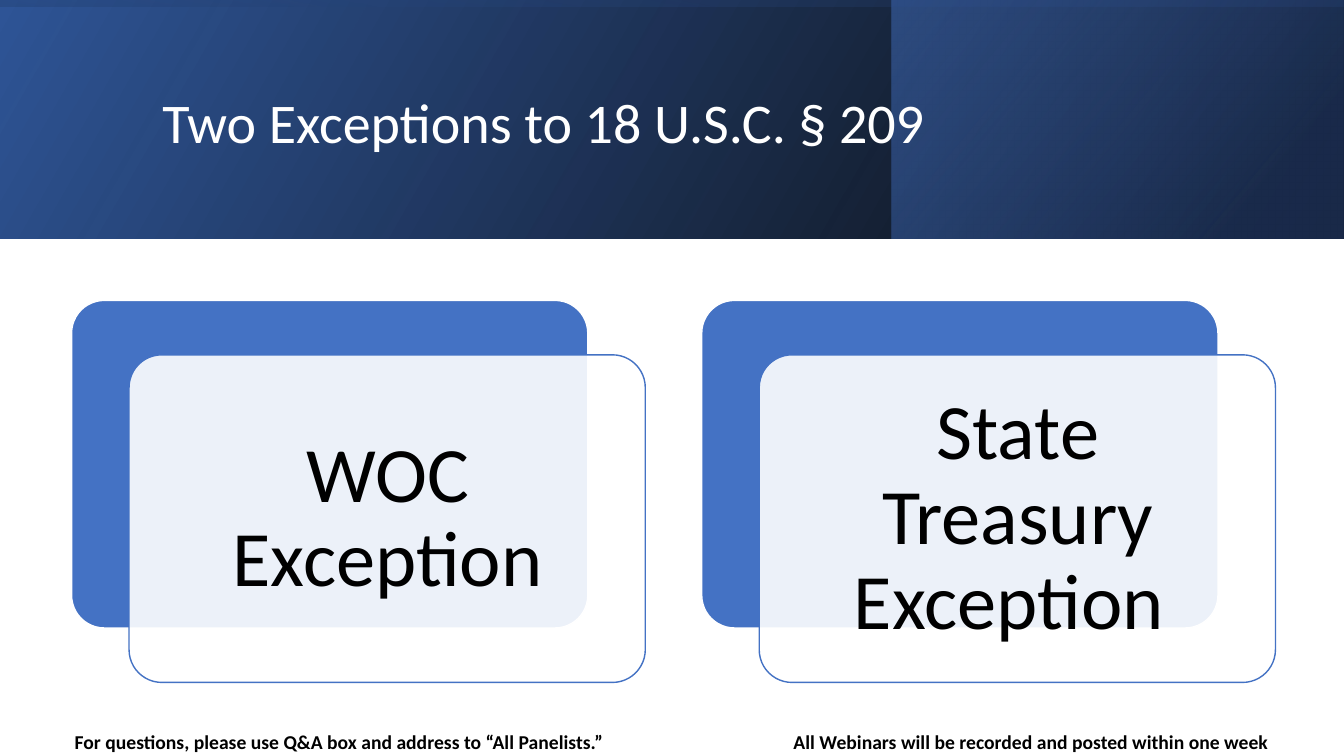
"""Build the slide on the two exceptions to 18 U.S.C. § 209."""
from lxml import etree
from pptx import Presentation
from pptx.dml.color import RGBColor
from pptx.enum.shapes import MSO_SHAPE as Shape
from pptx.enum.text import MSO_ANCHOR as Anchor, MSO_AUTO_SIZE as AutoSize, PP_ALIGN as Align
from pptx.oxml import parse_xml
from pptx.oxml.ns import nsdecls, qn
from pptx.util import Inches, Pt

COLORS = {"white": "FFFFFF", "black": "000000", "blue": "4472C4",
          "deep": "2F5597", "navy": "203864"}
FONT = "Calibri"


def add_panel(page, kind, left, top, width, height):
    panel = page.shapes.add_shape(kind, Inches(left), Inches(top), Inches(width), Inches(height))
    panel.shadow.inherit = False
    return panel


def write_text(box, text, size, color, align, spacing=1.0, bold=False):
    frame = box.text_frame
    frame.word_wrap = True
    frame.auto_size = AutoSize.NONE
    frame.vertical_anchor = Anchor.MIDDLE
    frame.text = text
    para = frame.paragraphs[0]
    para.alignment = align
    para.line_spacing = spacing
    for span in para.runs:
        span.font.name = FONT
        span.font.size = Pt(size)
        span.font.bold = bold
        span.font.color.rgb = RGBColor.from_string(COLORS[color])
    return frame


deck = Presentation()
deck.slide_width = Inches(13.33)
deck.slide_height = Inches(7.5)
page = deck.slides.add_slide(deck.slide_layouts[5])

banners = [
    ((0, 0, 13.33, 2.37), 0, 330, [(0, "black", 96), (100, "deep", 100)]),
    ((8.84, 0, 4.48, 2.37), 0, 320, [(19, "navy", 68), (100, "blue", 48)]),
    ((5.48, -5.48, 2.37, 13.33), 270, 350, [(23, "deep", 16), (99, "black", 45)]),
]
for place, turn, angle, stops in banners:
    banner = add_panel(page, Shape.RECTANGLE, *place)
    banner.rotation = turn
    banner.line.fill.background()
    properties = banner.element.spPr
    properties.find(qn("a:xfrm")).set("flipH", "1")
    stop_xml = "".join(
        f'<a:gs pos="{position * 1000}"><a:srgbClr val="{COLORS[color]}">'
        f'<a:alpha val="{alpha * 1000}"/></a:srgbClr></a:gs>'
        for position, color, alpha in stops)
    gradient = parse_xml(
        f'<a:gradFill {nsdecls("a")} rotWithShape="1"><a:gsLst>{stop_xml}</a:gsLst>'
        f'<a:lin ang="{angle * 60000}" scaled="0"/></a:gradFill>')
    properties.find(qn("a:prstGeom")).addnext(gradient)

title = page.shapes.title
title.left, title.top = Inches(1.51), Inches(0.38)
title.width, title.height = Inches(10.63), Inches(1.72)
write_text(title, "Two Exceptions to 18 U.S.C. § 209", 40, "white", Align.LEFT, 0.9)
title.element.getparent().append(title.element)

cards = [(0.71, "WOC Exception"), (6.96, "State Treasury Exception ")]
for left, label in cards:
    back = add_panel(page, Shape.ROUNDED_RECTANGLE, left, 2.98, 5.12, 3.25)
    front = add_panel(page, Shape.ROUNDED_RECTANGLE, left + 0.57, 3.52, 5.12, 3.25)
    for card, fill, line in ((back, "blue", "white"), (front, "white", "blue")):
        card.adjustments[0] = 0.1
        card.fill.solid()
        card.fill.fore_color.rgb = RGBColor.from_string(COLORS[fill])
        card.line.color.rgb = RGBColor.from_string(COLORS[line])
        card.line.width = Pt(1)
    tint = front.element.spPr.find(qn("a:solidFill")).find(qn("a:srgbClr"))
    etree.SubElement(tint, qn("a:alpha")).set("val", "90000")

    box = page.shapes.add_textbox(Inches(left + 0.67), Inches(3.62), Inches(4.93), Inches(3.06))
    frame = write_text(box, label, 56, "black", Align.CENTER, 0.9)
    frame.margin_left = frame.margin_right = Inches(0.23)
    frame.margin_top = frame.margin_bottom = Inches(0.23)

footer = page.shapes.add_textbox(0, Inches(7.22), Inches(13.33), Inches(0.28))
notice = ("For questions, please use Q&A box and address to “All Panelists.”"
          "\tAll Webinars will be recorded and posted within one week")
frame = write_text(footer, notice, 14, "black", Align.LEFT, bold=True)
frame.margin_left = Inches(0.74)
tabs = parse_xml(f'<a:tabLst {nsdecls("a")}><a:tab pos="{Inches(7.13)}" algn="l"/></a:tabLst>')
footer.element.find(".//" + qn("a:pPr")).append(tabs)

deck.save("out.pptx")
